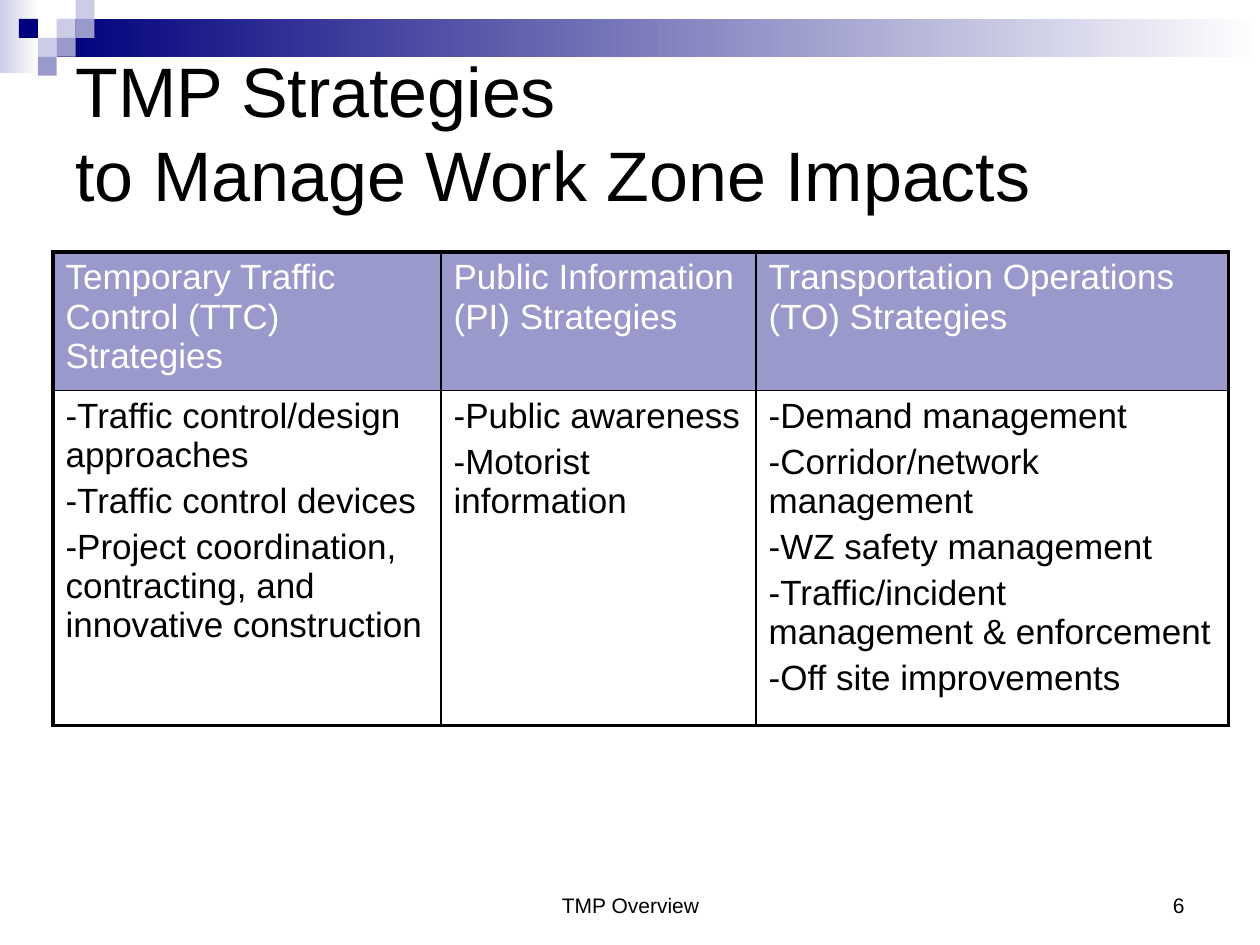
import pptx
import pptx.util
import pptx.dml.color
import pptx.enum.shapes
import pptx.enum.text
import pptx.oxml
import pptx.oxml.ns

Inches, Pt = pptx.util.Inches, pptx.util.Pt
RGB = pptx.dml.color.RGBColor
ALIGN = pptx.enum.text.PP_ALIGN
ANCHOR = pptx.enum.text.MSO_ANCHOR

NAVY = RGB(0x00, 0x00, 0x7D)
LILAC = RGB(0x99, 0x99, 0xCC)
PALE = RGB(0xCC, 0xCC, 0xE6)
WHITE = RGB(0xFF, 0xFF, 0xFF)
BLACK = RGB(0x00, 0x00, 0x00)

THICK, THIN = 2.25, 1
STEP = 0.15
# column, row and colour of each small square
SQUARES = [(3, 1, PALE), (4, 0, PALE), (4, 1, LILAC), (2, 2, PALE),
           (1, 1, NAVY), (3, 2, LILAC), (2, 3, LILAC)]

WIDTHS = [3.08, 2.5, 3.75]
HEIGHTS = [0.85, 2.35]
ROWS = [
    [["Temporary Traffic Control (TTC) Strategies"],
     ["Public Information (PI) Strategies"],
     ["Transportation Operations (TO) Strategies"]],
    [["-Traffic control/design approaches",
      "-Traffic control devices",
      "-Project coordination, contracting, and innovative construction"],
     ["-Public awareness", "-Motorist information"],
     ["-Demand management", "-Corridor/network management",
      "-WZ safety management",
      "-Traffic/incident management & enforcement",
      "-Off site improvements"]],
]


class Deck:
    font = "Arial"

    def __init__(self, slide):
        self.slide = slide

    def style(self, para, size, color, **form):
        look = {"name": self.font, "size": Pt(size)}
        for key, value in look.items():
            setattr(para.font, key, value)
        para.font.color.rgb = color
        for key, value in form.items():
            setattr(para, key, value)

    def rect(self, box, *colors):
        """Draw a rectangle; two colours make a left-to-right gradient."""
        kind = pptx.enum.shapes.MSO_SHAPE.RECTANGLE
        shape = self.slide.shapes.add_shape(kind, *map(Inches, box))
        shape.shadow.inherit = False
        shape.line.fill.background()
        if len(colors) == 1:
            shape.fill.solid()
            shape.fill.fore_color.rgb = colors[0]
        else:
            shape.fill.gradient()
            shape.fill.gradient_angle = 0
            for stop, color in zip(shape.fill.gradient_stops, colors):
                stop.color.rgb = color

    def text(self, box, words, size, anchor, align):
        frame = self.slide.shapes.add_textbox(*map(Inches, box)).text_frame
        form = {"word_wrap": True, "vertical_anchor": anchor, "text": words}
        for key, value in form.items():
            setattr(frame, key, value)
        for para in frame.paragraphs:
            self.style(para, size, BLACK, alignment=align)

    def edge(self, cell, side, width):
        props = cell._tc.get_or_add_tcPr()
        line = pptx.oxml.parse_xml(
            f'<a:ln{side} {pptx.oxml.ns.nsdecls("a")} w="{Pt(width)}">'
            f'<a:solidFill><a:srgbClr val="{BLACK}"/></a:solidFill>'
            f'</a:ln{side}>')
        props.append(line)

    def cell(self, cell, lines, head):
        cell.text = "\n".join(lines)
        for para in cell.text_frame.paragraphs:
            self.style(para, 20, WHITE if head else BLACK, space_before=Pt(4))

    def table(self, left, top, widths, heights, rows):
        size = map(Inches, (left, top, sum(widths), sum(heights)))
        grid = self.slide.shapes.add_table(len(rows), len(widths), *size).table
        for col, width in zip(grid.columns, widths):
            col.width = Inches(width)
        for row, height in zip(grid.rows, heights):
            row.height = Inches(height)
        for r, row in enumerate(rows):
            for c, lines in enumerate(row):
                cell = grid.cell(r, c)
                self.cell(cell, lines, r == 0)
                outer = {"L": c == 0, "R": c == len(row) - 1,
                         "T": r == 0, "B": r == len(rows) - 1}
                for side, rim in outer.items():
                    self.edge(cell, side, THICK if rim else THIN)
                if r == 0:
                    cell.fill.solid()
                    cell.fill.fore_color.rgb = LILAC
                else:
                    cell.fill.background()


def main():
    prs = pptx.Presentation()
    prs.slide_width, prs.slide_height = Inches(10), Inches(7.5)
    deck = Deck(prs.slides.add_slide(prs.slide_layouts[6]))

    deck.rect((0, 0, 0.31, 0.58), PALE, WHITE)
    deck.rect((0.45, 0.15, 9.55, 0.3), NAVY, WHITE)
    for col, row, color in SQUARES:
        deck.rect((col * STEP, row * STEP, STEP, STEP), color)

    deck.text((3.42, 6.83, 3.17, 0.5), "TMP Overview", 12,
              ANCHOR.BOTTOM, ALIGN.CENTER)
    deck.text((7.17, 6.83, 2.33, 0.5), "6", 12, ANCHOR.BOTTOM, ALIGN.RIGHT)
    deck.text((0.5, 0.5, 8.92, 1.08),
              "TMP Strategies \vto Manage Work Zone Impacts", 40,
              ANCHOR.MIDDLE, ALIGN.LEFT)
    deck.table(0.42, 2, WIDTHS, HEIGHTS, ROWS)
    prs.save("out.pptx")


if __name__ == "__main__":
    main()
